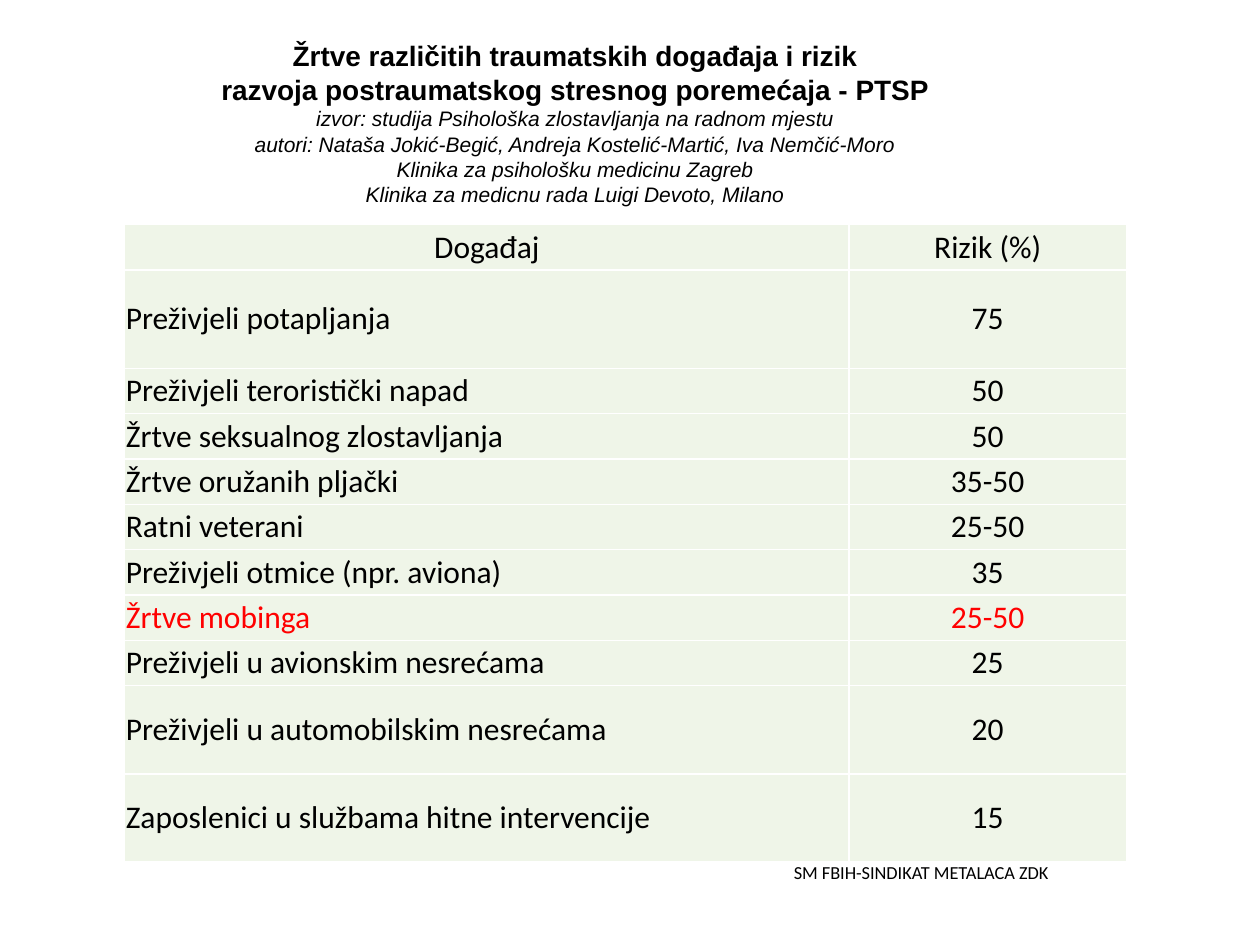
import copy

import pptx
import pptx.dml.color
import pptx.enum.text
import pptx.oxml
import pptx.oxml.ns
import pptx.util

Pt = pptx.util.Pt
Align = pptx.enum.text.PP_ALIGN
Anchor = pptx.enum.text.MSO_ANCHOR

BLACK, RED, WHITE, PALE_GREEN = "000000", "FF0000", "FFFFFF", "EFF5E8"

COLUMN_WIDTHS = [414, 158.4]
ROW_HEIGHT = 25.92
TALL_ROWS = {1: 56.16, 9: 50.4, 10: 50.4}
HIGHLIGHTED_EVENT = "Žrtve mobinga"
RISKS = [
    ("Događaj", "Rizik (%)"),
    ("Preživjeli potapljanja", "75"),
    ("Preživjeli teroristički napad", "50"),
    ("Žrtve seksualnog zlostavljanja", "50"),
    ("Žrtve oružanih pljački", "35-50"),
    ("Ratni veterani", "25-50"),
    ("Preživjeli otmice (npr. aviona)", "35"),
    (HIGHLIGHTED_EVENT, "25-50"),
    ("Preživjeli u avionskim nesrećama", "25"),
    ("Preživjeli u automobilskim nesrećama", "20"),
    ("Zaposlenici u službama hitne intervencije", "15"),
]

HEADING = (
    "Žrtve različitih traumatskih događaja i rizik\n"
    "razvoja postraumatskog stresnog poremećaja - PTSP\n"
)
SOURCE_LINES = [
    "izvor: studija Psihološka zlostavljanja na radnom mjestu",
    "autori: Nataša Jokić-Begić, Andreja Kostelić-Martić, Iva Nemčić-Moro",
    "Klinika za psihološku medicinu Zagreb",
    "Klinika za medicnu rada Luigi Devoto, Milano",
]


def color(value):
    return pptx.dml.color.RGBColor.from_string(value)


def write_text(paragraph, text, *, font, size, align=Align.LEFT,
               fill=BLACK, bold=False, italic=False):
    paragraph.alignment = align
    for index, line in enumerate(text.split("\n")):
        if index:
            paragraph.add_line_break()
            line_break = paragraph._p[-1]
            line_break.append(copy.deepcopy(run._r.get_or_add_rPr()))
        if line:
            run = paragraph.add_run()
            run.text = line
            run.font.name = font
            run.font.size = Pt(size)
            run.font.bold = bold
            run.font.italic = italic
            run.font.color.rgb = color(fill)


def add_title(slide):
    title = slide.shapes.title
    title.left, title.top = Pt(116.64), Pt(18)
    title.width, title.height = Pt(424.08), Pt(104.4)
    frame = title.text_frame
    frame.word_wrap = False
    frame.auto_size = pptx.enum.text.MSO_AUTO_SIZE.SHAPE_TO_FIT_TEXT
    frame.vertical_anchor = Anchor.MIDDLE
    paragraph = frame.paragraphs[0]
    write_text(paragraph, HEADING, font="Arial", size=16,
               align=Align.CENTER, bold=True)
    for index, line in enumerate(SOURCE_LINES):
        if index:
            paragraph = frame.add_paragraph()
        write_text(paragraph, line, font="Arial", size=12,
                   align=Align.CENTER, italic=True)


def set_borders(cell):
    properties = cell._tc.get_or_add_tcPr()
    for index, side in enumerate(("lnL", "lnR", "lnT", "lnB")):
        border = pptx.oxml.parse_xml(
            f'<a:{side} {pptx.oxml.ns.nsdecls("a")} w="{Pt(1)}"><a:solidFill>'
            f'<a:srgbClr val="{WHITE}"/></a:solidFill></a:{side}>'
        )
        properties.insert(index, border)


def format_cell(cell, text, **text_format):
    cell.fill.solid()
    cell.fill.fore_color.rgb = color(PALE_GREEN)
    cell.vertical_anchor = Anchor.MIDDLE
    cell.margin_left = cell.margin_right = Pt(0.72)
    cell.margin_top = cell.margin_bottom = Pt(0.72)
    set_borders(cell)
    write_text(cell.text_frame.paragraphs[0], text,
               font="Calibri", size=18, **text_format)


def add_risk_table(slide):
    heights = [TALL_ROWS.get(row, ROW_HEIGHT) for row in range(len(RISKS))]
    table = slide.shapes.add_table(
        len(RISKS), len(COLUMN_WIDTHS), Pt(71.2), Pt(128.4),
        Pt(sum(COLUMN_WIDTHS)), Pt(sum(heights))
    ).table
    table.horz_banding = False
    table.first_row = False
    for column, width in zip(table.columns, COLUMN_WIDTHS):
        column.width = Pt(width)
    for row_index, (event, risk) in enumerate(RISKS):
        table.rows[row_index].height = Pt(heights[row_index])
        fill = RED if event == HIGHLIGHTED_EVENT else BLACK
        event_align = Align.LEFT if row_index else Align.CENTER
        format_cell(table.cell(row_index, 0), event, align=event_align, fill=fill)
        format_cell(table.cell(row_index, 1), risk, align=Align.CENTER, fill=fill)


def add_footer(slide):
    box = slide.shapes.add_textbox(Pt(383.76), Pt(496.08), Pt(222.48), Pt(12.24))
    frame = box.text_frame
    frame.word_wrap = True
    frame.vertical_anchor = Anchor.BOTTOM
    write_text(frame.paragraphs[0], "SM FBIH-SINDIKAT METALACA ZDK",
               font="Calibri", size=10.5, align=Align.RIGHT)


def main():
    presentation = pptx.Presentation()
    presentation.slide_width, presentation.slide_height = Pt(720), Pt(540)
    slide = presentation.slides.add_slide(presentation.slide_layouts[5])
    add_risk_table(slide)
    add_title(slide)
    add_footer(slide)
    presentation.save("out.pptx")


if __name__ == "__main__":
    main()
